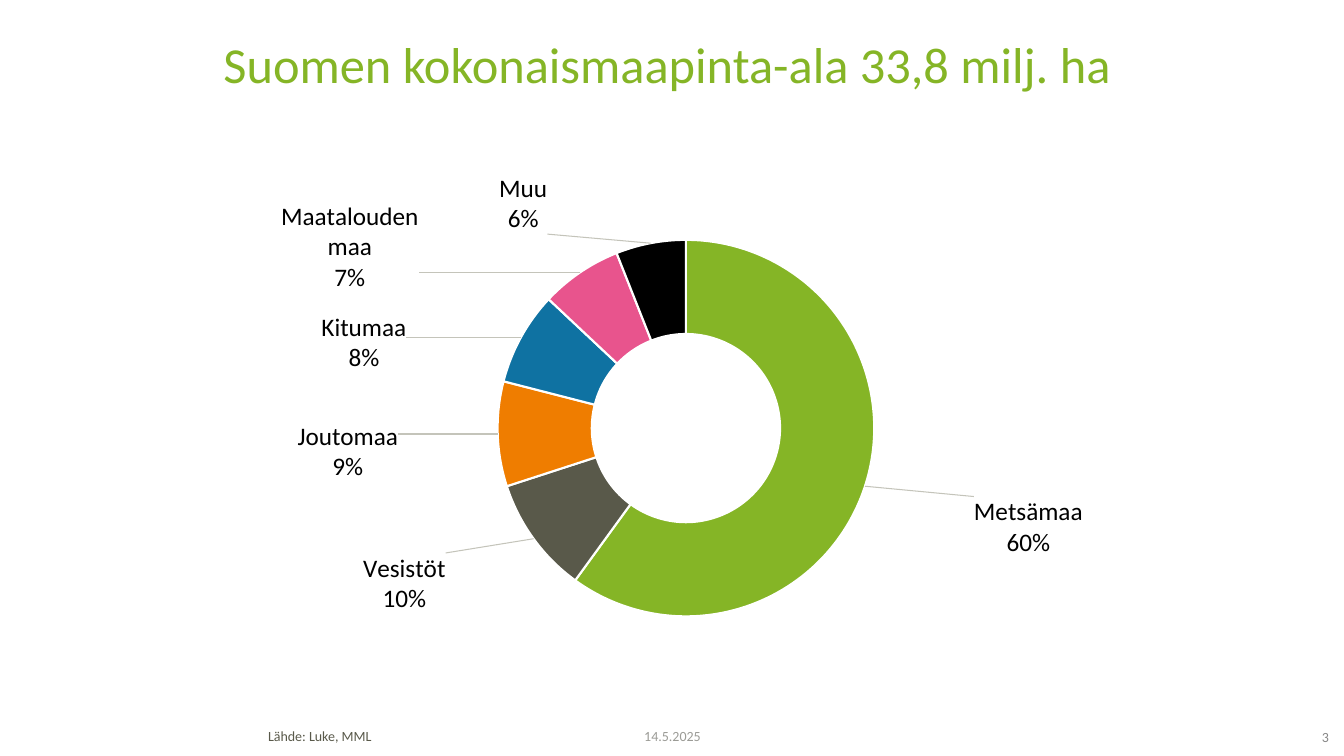
import math

import pptx
import pptx.chart.data
import pptx.dml.color
import pptx.enum.chart
import pptx.enum.text
import pptx.oxml
import pptx.util
from pptx.util import Inches, Pt

ALIGN = pptx.enum.text.PP_ALIGN
ANCHOR = pptx.enum.text.MSO_ANCHOR
C_NS = "http://schemas.openxmlformats.org/drawingml/2006/chart"
A_NS = "http://schemas.openxmlformats.org/drawingml/2006/main"
C15_NS = "http://schemas.microsoft.com/office/drawing/2012/chart"
NS = f'xmlns:c="{C_NS}" xmlns:a="{A_NS}" xmlns:c15="{C15_NS}"'

FONT = "Calibri"
GREEN, GREY = "85B526", "59594A"

TITLE = dict(text="Suomen kokonaismaapinta-ala 33,8 milj. ha ",
             at=(0.83, 0.39, 11.69, 0.98), size=36, color=GREEN,
             align=ALIGN.CENTER, anchor=ANCHOR.TOP)
FOOTERS = [
    dict(text="Lähde: Luke, MML", at=(2.56, 7.17, 3.75, 0.27), size=10,
         color=GREY, align=ALIGN.LEFT, anchor=ANCHOR.TOP),
    dict(text="14.5.2025", at=(5.17, 7.15, 3, 0.31), size=10,
         color="9B9B96", align=ALIGN.CENTER, anchor=ANCHOR.MIDDLE),
    dict(text="3", at=(12.65, 7.24, 0.53, 0.19), size=10,
         color="878787", align=ALIGN.RIGHT, anchor=ANCHOR.MIDDLE,
         margins=(0, 0, 0, 0.04)),
]
# land class, share, colour, centre of its label on the slide
LAND = [
    ("Metsämaa", 0.60, GREEN, (10.20, 5.23)),
    ("Vesistöt", 0.10, GREY, (4.01, 5.79)),
    ("Joutomaa", 0.09, "EF7D00", (3.45, 4.48)),
    ("Kitumaa", 0.08, "0F72A2", (3.61, 3.40)),
    ("Maatalouden maa", 0.07, "E8548D", (3.47, 2.45)),
    ("Muu", 0.06, "000000", (5.19, 2.02)),
]
CHART_AT = (0.83, 1.57, 11.69, 5.16)
PLOT = dict(x=0.234, y=0.157, w=0.554, h=0.724)
HOLE = 60
RING_MIDDLE = 0.75  # share of the outer radius at which labels start
LABEL_SIZE = {"Maatalouden maa": (0.13, 0.18)}


def rgb(color):
    return pptx.dml.color.RGBColor.from_string(color)


def set_font(font, size, color):
    for name, value in dict(name=FONT, size=Pt(size), bold=False).items():
        setattr(font, name, value)
    font.color.rgb = rgb(color)


def xml(text):
    return pptx.oxml.parse_xml(text)


def fill_text(sp, item):
    tf = sp.text_frame
    frame = dict(word_wrap=True, vertical_anchor=item["anchor"],
                 auto_size=pptx.enum.text.MSO_AUTO_SIZE.NONE)
    sides = ("margin_left", "margin_top", "margin_right", "margin_bottom")
    margins = item.get("margins", (0.1, 0.05, 0.1, 0.05))
    frame.update(zip(sides, map(Inches, margins)))
    for name, value in frame.items():
        setattr(tf, name, value)
    p = tf.paragraphs[0]
    p.alignment = item["align"]
    r = p.add_run()
    r.text = item["text"]
    set_font(r.font, item["size"], item["color"])


def label_offsets():
    """Yield each label's shift from the middle of its ring segment."""
    left, top, width, height = CHART_AT
    cx = left + (PLOT["x"] + PLOT["w"] / 2) * width
    cy = top + (PLOT["y"] + PLOT["h"] / 2) * height
    radius = RING_MIDDLE * min(PLOT["w"] * width, PLOT["h"] * height) / 2
    start = 0
    for _, share, _, (x, y) in LAND:
        angle = 2 * math.pi * (start + share / 2)
        start += share
        yield ((x - cx - radius * math.sin(angle)) / width,
               (y - cy + radius * math.cos(angle)) / height)


def label_xml(idx, name, dx, dy):
    ext = ""
    if name in LABEL_SIZE:
        w, h = LABEL_SIZE[name]
        ext = (f'<c:extLst><c:ext uri="{{CE6537A1-D6FC-4f65-9D91-7224C49458BB}}">'
               f'<c15:layout><c:manualLayout><c:w val="{w}"/><c:h val="{h}"/>'
               '</c:manualLayout></c15:layout></c:ext></c:extLst>')
    return (f'<c:dLbl {NS}><c:idx val="{idx}"/><c:layout><c:manualLayout>'
            f'<c:x val="{dx:.4f}"/><c:y val="{dy:.4f}"/></c:manualLayout></c:layout>'
            '<c:showLegendKey val="0"/><c:showVal val="1"/><c:showCatName val="1"/>'
            '<c:showSerName val="0"/><c:showPercent val="0"/><c:showBubbleSize val="0"/>'
            f'<c:separator>\n</c:separator>{ext}</c:dLbl>')


def add_land_chart(s):
    data = pptx.chart.data.CategoryChartData(number_format="0%")
    data.categories = [name for name, *_ in LAND]
    data.add_series("Series 1", [share for _, share, *_ in LAND])
    chart = s.shapes.add_chart(pptx.enum.chart.XL_CHART_TYPE.DOUGHNUT,
                               *map(Inches, CHART_AT), data).chart
    chart.has_legend = chart.has_title = False
    set_font(chart.font, 10, GREY)
    plot = chart.plots[0]
    plot.vary_by_categories = True
    plot._element.find(f"{{{C_NS}}}holeSize").set("val", str(HOLE))

    area = chart._chartSpace.chart.plotArea
    for old in area.findall(f"{{{C_NS}}}layout"):
        area.remove(old)
    sizes = "".join(f'<c:{k} val="{v}"/>' for k, v in PLOT.items())
    area.insert(0, xml(f'<c:layout {NS}><c:manualLayout><c:layoutTarget val="inner"/>'
                       '<c:xMode val="edge"/><c:yMode val="edge"/>'
                       f'{sizes}</c:manualLayout></c:layout>'))

    series = plot.series[0]
    labels = series.data_labels
    for name, value in dict(show_value=True, show_category_name=True,
                            show_percentage=False, number_format="0%",
                            number_format_is_linked=False).items():
        setattr(labels, name, value)
    set_font(labels.font, 18, "000000")
    for i, ((name, _, color, _), (dx, dy)) in enumerate(zip(LAND, label_offsets())):
        fmt = series.points[i].format
        fmt.fill.solid()
        fmt.fill.fore_color.rgb = rgb(color)
        fmt.line.color.rgb = rgb("FFFFFF")
        fmt.line.width = Pt(1.5)
        labels._element.insert(i, xml(label_xml(i, name, dx, dy)))

    for old in labels._element.findall(f"{{{C_NS}}}showLeaderLines"):
        labels._element.remove(old)
    for part in ("<c:separator {}>\n</c:separator>",
                 '<c:showLeaderLines {} val="1"/>',
                 '<c:leaderLines {}><c:spPr><a:ln w="9525"><a:solidFill>'
                 '<a:srgbClr val="C4C4BA"/></a:solidFill></a:ln></c:spPr></c:leaderLines>'):
        labels._element.append(xml(part.format(NS)))


def main():
    prs = pptx.Presentation()
    prs.slide_width, prs.slide_height = Inches(13.33), Inches(7.5)
    s = prs.slides.add_slide(prs.slide_layouts[5])
    title = s.shapes.title
    for name, value in zip(("left", "top", "width", "height"), TITLE["at"]):
        setattr(title, name, Inches(value))
    fill_text(title, TITLE)
    title.text_frame.paragraphs[0].line_spacing = 0.8
    add_land_chart(s)
    for item in FOOTERS:
        fill_text(s.shapes.add_textbox(*map(Inches, item["at"])), item)
    prs.save("out.pptx")


if __name__ == "__main__":
    main()
